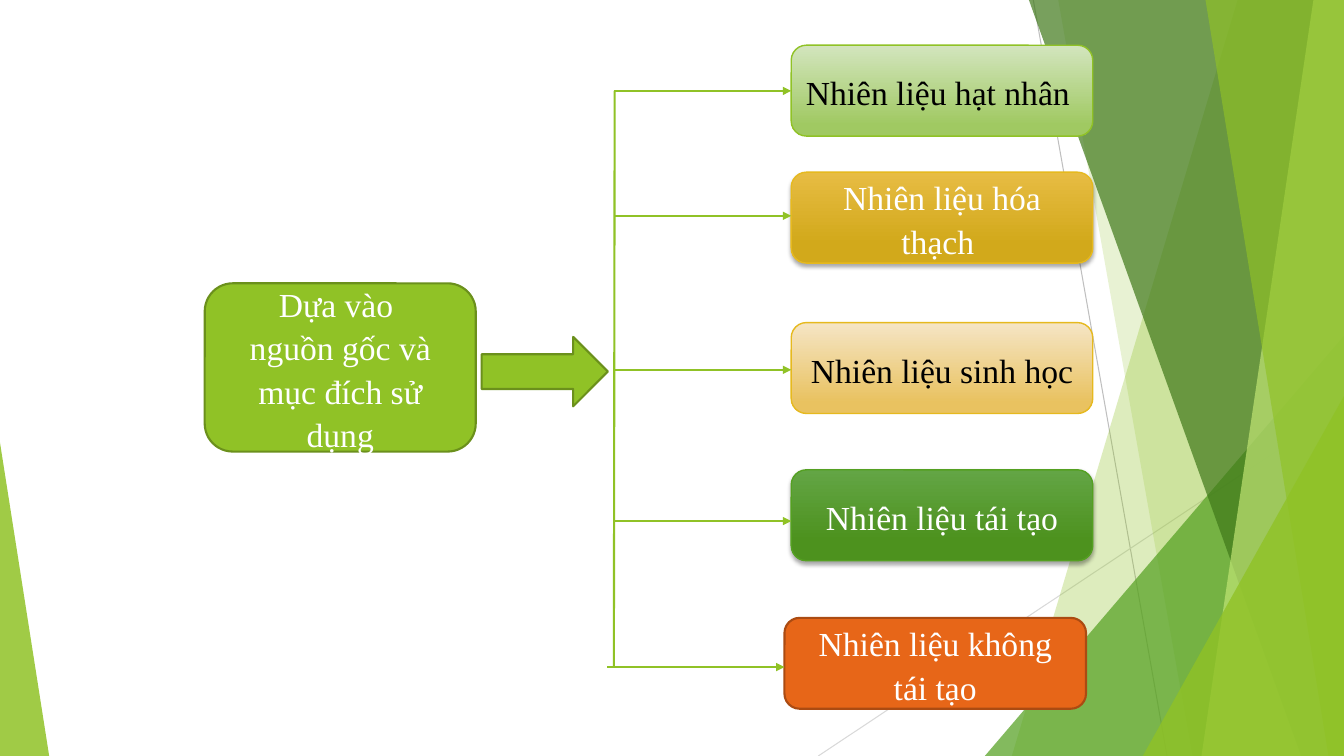
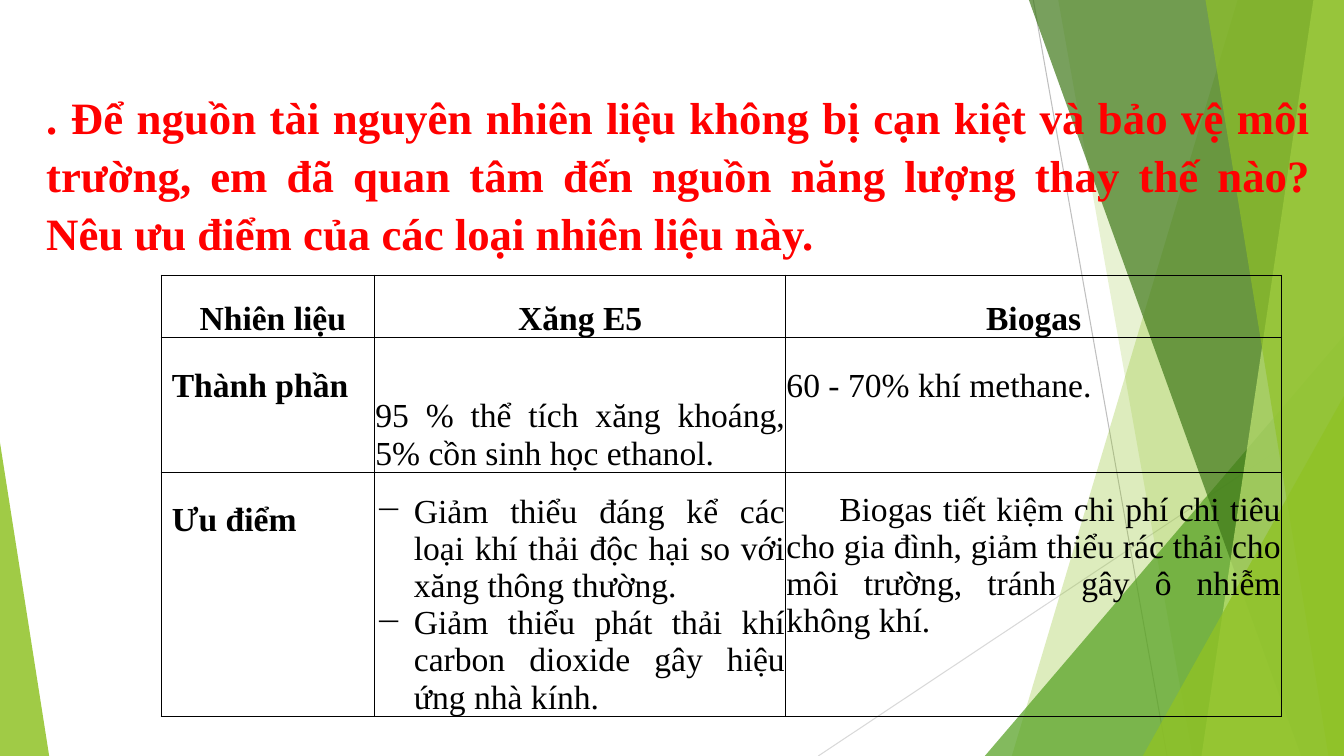
from lxml import etree
from pptx import Presentation
from pptx.dml.color import RGBColor
from pptx.enum import shapes as kinds
from pptx.enum import text as t
from pptx.oxml import parse_xml
from pptx.oxml.ns import nsdecls, qn
from pptx.util import Cm, Pt

FONT = "Times New Roman"
WIDTH, HEIGHT = 33.87, 19.05
LIME, DARK_LIME, PALE_LIME = "90C226", "6B901C", "C0E474"
GREEN, FOREST, GOLD = "54A021", "3F7819", "E6B91E"
ORANGE, RUST = "E76618", "AB4B12"
BLACK, WHITE, RED = "000000", "FFFFFF", "FF0000"
CENTER, JUSTIFY = t.PP_ALIGN.CENTER, t.PP_ALIGN.JUSTIFY
TOP, BOTTOM = t.MSO_ANCHOR.TOP, t.MSO_ANCHOR.BOTTOM
LOOSE = 1.08


def rgb(color):
    return RGBColor.from_string(color)


def cm(*lengths):
    return [Cm(length) for length in lengths]


def format_text(frame, size, color, align, bold=False, spacing=None):
    for paragraph in frame.paragraphs:
        paragraph.alignment = align
        paragraph.line_spacing = spacing
        for run in paragraph.runs:
            run.font.name = FONT
            run.font.size = Pt(size)
            run.font.bold = bold
            run.font.color.rgb = rgb(color)


def paint(shape, fill, line=None, weight=1.0, opacity=100):
    """Fill with one colour, or with (top, bottom, end percent) as a gradient."""
    shape.shadow.inherit = False
    if isinstance(fill, tuple):
        shape.fill.gradient()
        shape.fill.gradient_angle = 270
        stops = shape.fill.gradient_stops
        for stop, color, position in zip(stops, fill[:2], (0, fill[2] / 100)):
            stop.color.rgb = rgb(color)
            stop.position = position
    else:
        shape.fill.solid()
        shape.fill.fore_color.rgb = rgb(fill)
        if opacity < 100:
            color = shape._element.spPr.find(qn("a:solidFill"))[0]
            etree.SubElement(color, qn("a:alpha"), val=str(opacity * 1000))
    if line:
        shape.line.color.rgb = rgb(line)
        shape.line.width = Pt(weight)
    else:
        shape.line.fill.background()


def drop_shadow(shape):
    effects = shape._element.spPr.find(qn("a:effectLst"))
    effects.append(parse_xml(
        f'<a:outerShdw {nsdecls("a")} blurRad="38100" dist="25400" dir="5400000" '
        'rotWithShape="0"><a:srgbClr val="000000"><a:alpha val="35000"/>'
        '</a:srgbClr></a:outerShdw>'))


def add_line(slide, start, end, color, weight, arrow=False):
    line = slide.shapes.add_connector(
        kinds.MSO_CONNECTOR.STRAIGHT, *cm(*start, *end))
    line.line.color.rgb = rgb(color)
    line.line.width = Pt(weight)
    if arrow:
        etree.SubElement(line.line._get_or_add_ln(), qn("a:tailEnd"), type="triangle")
    etree.SubElement(line._element.spPr, qn("a:effectLst"))


def add_facet(slide, top_x, bottom_x, color, opacity):
    """Full-height band from a slanted left edge to the right slide edge."""
    builder = slide.shapes.build_freeform(*cm(top_x, 0), scale=1.0)
    builder.add_line_segments(
        [cm(WIDTH, 0), cm(WIDTH, HEIGHT), cm(bottom_x, HEIGHT)], close=True)
    paint(builder.convert_to_shape(), color, opacity=opacity)


def add_corner(slide, left, top, width, apex, color, opacity):
    """Triangle that stands on the bottom slide edge."""
    corner = slide.shapes.add_shape(
        kinds.MSO_SHAPE.ISOSCELES_TRIANGLE, *cm(left, top, width, HEIGHT - top))
    corner.adjustments[0] = apex
    paint(corner, color, opacity=opacity)


def decorate_master(prs, slide):
    """Draw the facets on a still empty slide, then move them to the master."""
    add_line(slide, (26.04, 0), (29.41, HEIGHT), "BFBFBF", 0.75)
    add_line(slide, (WIDTH, 10.24), (20.62, HEIGHT), "D9D9D9", 0.75)
    add_facet(slide, 31.19, 25.5, LIME, 30)
    add_facet(slide, 26.67, 30.05, LIME, 20)
    add_corner(slide, 24.82, 8.46, 9.05, 1, GREEN, 72)
    add_facet(slide, 25.93, 32.79, FOREST, 70)
    add_facet(slide, 33.1, 30.28, PALE_LIME, 70)
    add_facet(slide, 30.38, 33.48, LIME, 65)
    add_corner(slide, 28.8, 9.98, 5.07, 1, LIME, 80)
    add_corner(slide, 0, 11.15, 1.24, 0, LIME, 85)
    master_tree = prs.slide_master.shapes._spTree
    for number, part in enumerate(list(slide.shapes), 100):
        part._element.xpath(".//p:cNvPr")[0].set("id", str(number))
        master_tree.append(part._element)


def add_node(slide, box, label, fill, line, weight, color):
    node = slide.shapes.add_shape(kinds.MSO_SHAPE.ROUNDED_RECTANGLE, *cm(*box))
    paint(node, fill, line, weight)
    node.text_frame.text = label
    node.text_frame.word_wrap = True
    node.text_frame.vertical_anchor = t.MSO_ANCHOR.MIDDLE
    format_text(node.text_frame, 24, color, CENTER, spacing=LOOSE)
    return node


# label, box top, arrow height, shift to the right, fill, line, weight, text, shadow
FUELS = [
    ("Nhiên liệu hạt nhân ", 0, 1.15, 0,
     ("D3E5BE", "A0C962", 88), LIME, 1, BLACK, False),
    ("Nhiên liệu hóa thạch ", 3.2, 4.3, 0,
     ("E7BC43", "D2A91B", 78), GOLD, 1, WHITE, True),
    ("Nhiên liệu sinh học", 6.99, 8.18, 0,
     ("F5E5C5", "E9C260", 88), GOLD, 1, BLACK, False),
    ("Nhiên liệu tái tạo", 10.7, 11.99, 0,
     ("63A545", "4D921E", 78), GREEN, 1, WHITE, True),
    ("Nhiên liệu không tái tạo", 14.43, 15.67, -0.17,
     ORANGE, RUST, 1.5, WHITE, False),
]


def add_criterion(slide, left, top):
    """The basis of the classification, with the block arrow to its right."""
    add_node(slide, (left, top, 6.83, 4.24),
             "Dựa vào \nnguồn gốc và mục đích sử dụng", LIME, DARK_LIME, 1.5, WHITE)
    arrow = slide.shapes.add_shape(
        kinds.MSO_SHAPE.RIGHT_ARROW, *cm(left + 6.98, top + 1.35, 3.18, 1.75))
    paint(arrow, LIME, DARK_LIME, 1.5)


def add_fuel_branches(slide, left, top):
    """A trunk with one arrow and one node for each fuel."""
    reach, width, height = 4.47, 7.6, 2.29
    for label, node_top, arrow_y, shift, fill, line, weight, color, shadow in FUELS:
        start, y = left + shift, top + arrow_y
        node = add_node(slide, (start + reach, top + node_top, width, height),
                        label, fill, line, weight, color)
        if shadow:
            drop_shadow(node)
        add_line(slide, (start, y), (start + reach, y), LIME, 1, arrow=True)
    add_line(slide, (left + 0.02, top + FUELS[0][2]), (left, top + FUELS[-1][2]),
             LIME, 1.5)


def add_question(slide, left, top, width, height):
    title = slide.shapes.title
    title.left, title.top, title.width, title.height = cm(left, top, width, height)
    frame = title.text_frame
    frame.text = (". Để nguồn tài nguyên nhiên liệu không bị cạn kiệt và bảo vệ môi "
                  "trường, em đã quan tâm đến nguồn năng lượng thay thế nào? "
                  "Nêu ưu điểm của các loại nhiên liệu này.")
    frame.word_wrap = True
    frame.auto_size = t.MSO_AUTO_SIZE.NONE
    frame.vertical_anchor = TOP
    format_text(frame, 32, RED, JUSTIFY, bold=True, spacing=LOOSE)


def add_borders(cell):
    tc_pr = cell._tc.get_or_add_tcPr()
    for index, side in enumerate(("lnL", "lnR", "lnT", "lnB")):
        tc_pr.insert(index, parse_xml(
            f'<a:{side} {nsdecls("a")} w="9525"><a:solidFill>'
            f'<a:srgbClr val="{BLACK}"/></a:solidFill></a:{side}>'))


def indent(paragraph, margin, first_line, bullet=None):
    p_pr = paragraph._p.get_or_add_pPr()
    p_pr.set("marL", str(Cm(margin)))
    p_pr.set("indent", str(Cm(first_line)))
    if bullet:
        etree.SubElement(p_pr, qn("a:buChar"), char=bullet)


COMPARISON = [
    ("Nhiên liệu", "Xăng E5", "Biogas"),
    ("Thành phần", "95 % thể tích xăng khoáng, 5% cồn sinh học ethanol.",
     "60 - 70% khí methane."),
    ("Ưu điểm",
     "Giảm thiểu đáng kể các loại khí thải độc hại so với xăng thông thường.\n"
     "Giảm thiểu phát thải khí carbon dioxide gây hiệu ứng nhà kính.",
     "Biogas tiết kiệm chi phí chi tiêu cho gia đình, giảm thiểu rác thải cho "
     "môi trường, tránh gây ô nhiễm không khí."),
]


def add_comparison(slide, left, top):
    columns, rows = (5.38, 10.36, 12.5), (1.57, 3.4, 6.15)
    table = slide.shapes.add_table(
        len(rows), len(columns), *cm(left, top, sum(columns), sum(rows))).table
    table.first_row = table.horz_banding = False
    for column, width in zip(table.columns, columns):
        column.width = Cm(width)
    for r, (height, texts) in enumerate(zip(rows, COMPARISON)):
        table.rows[r].height = Cm(height)
        for c, content in enumerate(texts):
            cell = table.cell(r, c)
            at_bottom = r == 0 or c == 1
            cell.text_frame.text = content
            cell.vertical_anchor = BOTTOM if at_bottom else TOP
            cell.margin_left = Cm(0.27 if c == 0 else 0.02)
            cell.margin_right = Cm(0.02)
            cell.margin_top = Cm(0 if at_bottom else 0.75)
            cell.margin_bottom = 0
            cell.fill.background()
            add_borders(cell)
            format_text(cell.text_frame, 24, BLACK, JUSTIFY if r else CENTER,
                        bold=r == 0 or c == 0)
    benefits, biogas = table.cell(2, 1), table.cell(2, 2)
    for paragraph in benefits.text_frame.paragraphs:
        indent(paragraph, 0.97, -0.97, "−")
    biogas.margin_top = Cm(0.48)
    indent(biogas.text_frame.paragraphs[0], 0, 1.33)


def main():
    prs = Presentation()
    prs.slide_width, prs.slide_height = cm(WIDTH, HEIGHT)
    title_only, blank = prs.slide_layouts[5], prs.slide_layouts[6]

    classification = prs.slides.add_slide(blank)
    decorate_master(prs, classification)
    add_criterion(classification, 5.16, 7.14)
    add_fuel_branches(classification, 15.47, 1.14)

    alternatives = prs.slides.add_slide(title_only)
    add_question(alternatives, 0.91, 2.03, 32.39, 4.37)
    add_comparison(alternatives, 4.06, 6.93)

    prs.save("out.pptx")


if __name__ == "__main__":
    main()
